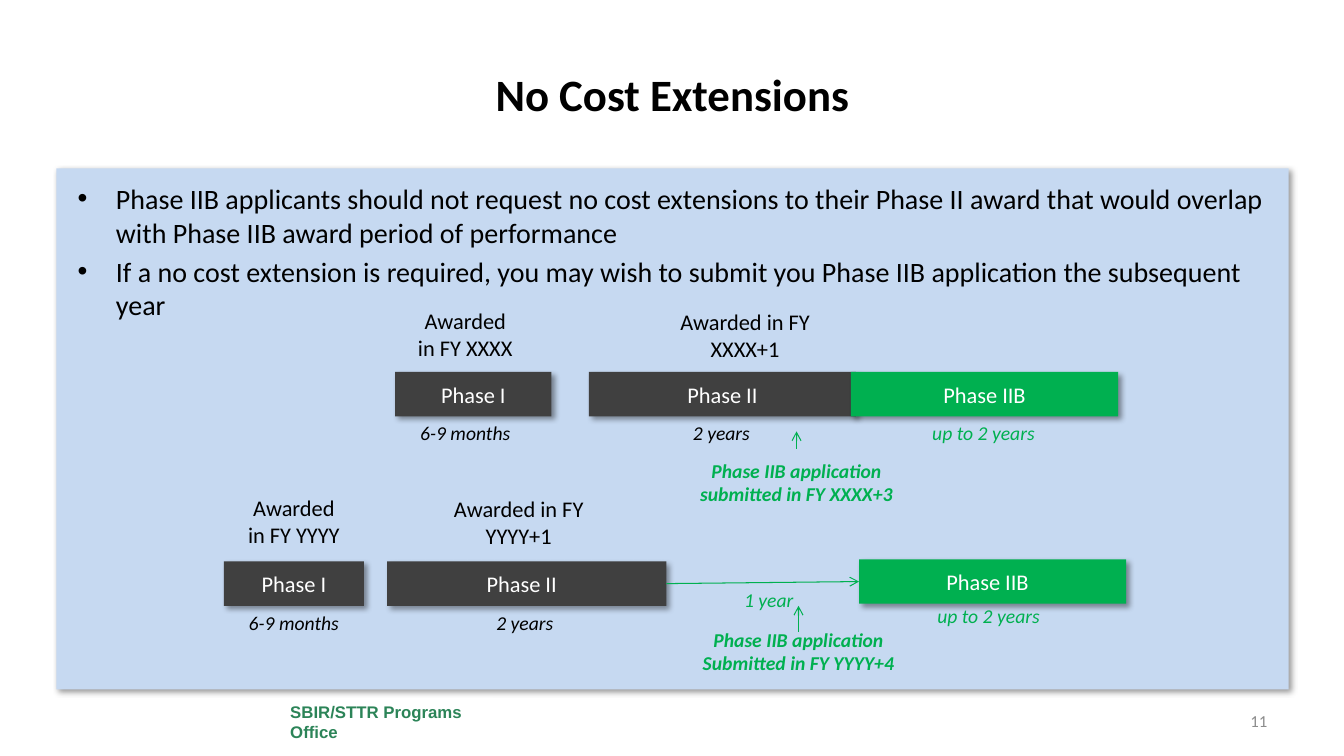
from lxml.etree import SubElement
from pptx import Presentation
from pptx.dml.color import RGBColor
from pptx.enum.shapes import MSO_CONNECTOR, MSO_SHAPE
from pptx.enum.text import MSO_ANCHOR, MSO_AUTO_SIZE, PP_ALIGN
from pptx.oxml import parse_xml
from pptx.oxml.ns import nsdecls, qn
from pptx.util import Inches, Pt

BLACK = RGBColor(0x00, 0x00, 0x00)
WHITE = RGBColor(0xFF, 0xFF, 0xFF)
PALE_BLUE = RGBColor(0xC6, 0xD9, 0xF1)
CHARCOAL = RGBColor(0x40, 0x40, 0x40)
GREEN = RGBColor(0x00, 0xB0, 0x50)
OFFICE_GREEN = RGBColor(0x2C, 0x84, 0x58)
GRAY = RGBColor(0x8C, 0x8C, 0x8C)
SHADOW = (
    f'<a:effectLst {nsdecls("a")}><a:outerShdw blurRad="50800" dist="38100" '
    'dir="2700000" algn="tl" rotWithShape="0"><a:srgbClr val="000000">'
    '<a:alpha val="40000"/></a:srgbClr></a:outerShdw></a:effectLst>'
)


def add_rectangle(place, fill, shadowed=True):
    box = page.shapes.add_shape(MSO_SHAPE.RECTANGLE, *map(Inches, place))
    box.shadow.inherit = False
    box.fill.solid()
    box.fill.fore_color.rgb = fill
    box.line.fill.background()
    if shadowed:
        properties = box.element.spPr
        properties.replace(properties.find(qn("a:effectLst")), parse_xml(SHADOW))
    return box


def write(box, lines, size, color, align=PP_ALIGN.CENTER, anchor=MSO_ANCHOR.TOP,
          bold=False, italic=False, name="Calibri"):
    frame = box.text_frame
    frame.word_wrap = True
    frame.auto_size = MSO_AUTO_SIZE.NONE
    frame.vertical_anchor = anchor
    for index, line in enumerate(lines):
        para = frame.add_paragraph() if index else frame.paragraphs[0]
        para.alignment = align
        span = para.add_run()
        span.text = line
        span.font.name = name
        span.font.size = Pt(size)
        span.font.bold = bold
        span.font.italic = italic
        span.font.color.rgb = color


deck = Presentation()
deck.slide_width, deck.slide_height = Inches(13.33), Inches(7.5)
page = deck.slides.add_slide(deck.slide_layouts[1])
title, body = page.shapes.title, page.placeholders[1]

panel = add_rectangle((0.56, 1.67, 12.22, 5.17), PALE_BLUE)
office = add_rectangle((2.78, 6.92, 2.11, 0.48), WHITE, shadowed=False)
write(office, ["SBIR/STTR Programs Office"], 12, OFFICE_GREEN, PP_ALIGN.LEFT,
      MSO_ANCHOR.MIDDLE, bold=True, name="Arial")
for backdrop in (panel, office):
    title.element.addprevious(backdrop.element)

title.left, title.top, title.width, title.height = map(Inches, (0.67, 0.3, 12, 1.25))
write(title, ["No Cost Extensions"], 32, BLACK, anchor=MSO_ANCHOR.MIDDLE, bold=True)

body.left, body.top, body.width, body.height = map(Inches, (0.67, 1.75, 12, 4.95))
write(body, [
    "Phase IIB applicants should not request no cost extensions to their Phase II award "
    "that would overlap with Phase IIB award period of performance",
    "If a no cost extension is required, you may wish to submit you Phase IIB application "
    "the subsequent year",
], 20, BLACK, PP_ALIGN.LEFT)
for para, space in zip(body.text_frame.paragraphs, (0, 4)):
    properties = para._p.get_or_add_pPr()
    properties.set("marL", str(Inches(0.38)))
    properties.set("indent", str(Inches(-0.38)))
    SubElement(properties, qn("a:buChar"), char="•")
    para.space_before = Pt(space)

number = page.shapes.add_textbox(*map(Inches, (10.56, 6.95, 2.11, 0.4)))
write(number, ["11"], 12, GRAY, PP_ALIGN.RIGHT, MSO_ANCHOR.MIDDLE)

phases = [
    ("Phase I", 3.92, 3.69, 1.55, CHARCOAL, 0.1),
    ("Phase II", 5.84, 3.69, 2.65, CHARCOAL, 0.1),
    ("Phase IIB", 8.44, 3.69, 2.65, GREEN, 0.1),
    ("Phase I", 2.22, 5.57, 1.39, CHARCOAL, 0.1),
    ("Phase II", 3.84, 5.57, 2.77, CHARCOAL, 0.2),
    ("Phase IIB", 8.52, 5.55, 2.65, GREEN, 0.2),
]
for label, left, top, width, fill, right_margin in phases:
    bar = add_rectangle((left, top, width, 0.44), fill)
    bar.text_frame.margin_right = Inches(right_margin)
    write(bar, [label], 16, WHITE, anchor=MSO_ANCHOR.MIDDLE)

durations = [
    ("6-9 months", 3.96, 4.13, BLACK),
    ("2 years", 6.5, 4.13, BLACK),
    ("up to 2 years", 9.1, 4.13, GREEN),
    ("6-9 months", 2.26, 6.01, BLACK),
    ("2 years", 4.55, 6.01, BLACK),
    ("1 year", 6.97, 5.78, GREEN),
    ("up to 2 years", 9.15, 5.94, GREEN),
]
for label, left, top, color in durations:
    box = page.shapes.add_textbox(*map(Inches, (left, top, 1.31, 0.34)))
    write(box, [label], 14, color, italic=True)

awards = [
    ("Awarded in FY XXXX", 4.03, 3, 1.17),
    ("Awarded in FY XXXX+1", 6.5, 3.01, 1.78),
    ("Awarded in FY YYYY", 2.33, 4.85, 1.17),
    ("Awarded in FY YYYY+1", 4.18, 4.86, 1.93),
]
for label, left, top, width in awards:
    box = page.shapes.add_textbox(*map(Inches, (left, top, width, 0.64)))
    write(box, [label], 16, BLACK)

applications = [
    (["Phase IIB application submitted in FY XXXX+3"], 6.79, 4.5),
    (["Phase IIB application", "Submitted in FY YYYY+4"], 6.81, 6.18),
]
for lines, left, top in applications:
    box = page.shapes.add_textbox(*map(Inches, (left, top, 2.22, 0.57)))
    write(box, lines, 14, GREEN, bold=True, italic=True)

arrows = [(7.9, 4.45, 7.9, 4.28), (6.61, 5.79, 8.52, 5.77), (7.92, 6.27, 7.92, 6.01)]
for ends in arrows:
    arrow = page.shapes.add_connector(MSO_CONNECTOR.STRAIGHT, *map(Inches, ends))
    arrow.line.color.rgb = GREEN
    arrow.line.width = Pt(0.75)
    SubElement(arrow.line._get_or_add_ln(), qn("a:tailEnd"), type="arrow")
    SubElement(arrow.element.spPr, qn("a:effectLst"))

deck.save("out.pptx")
